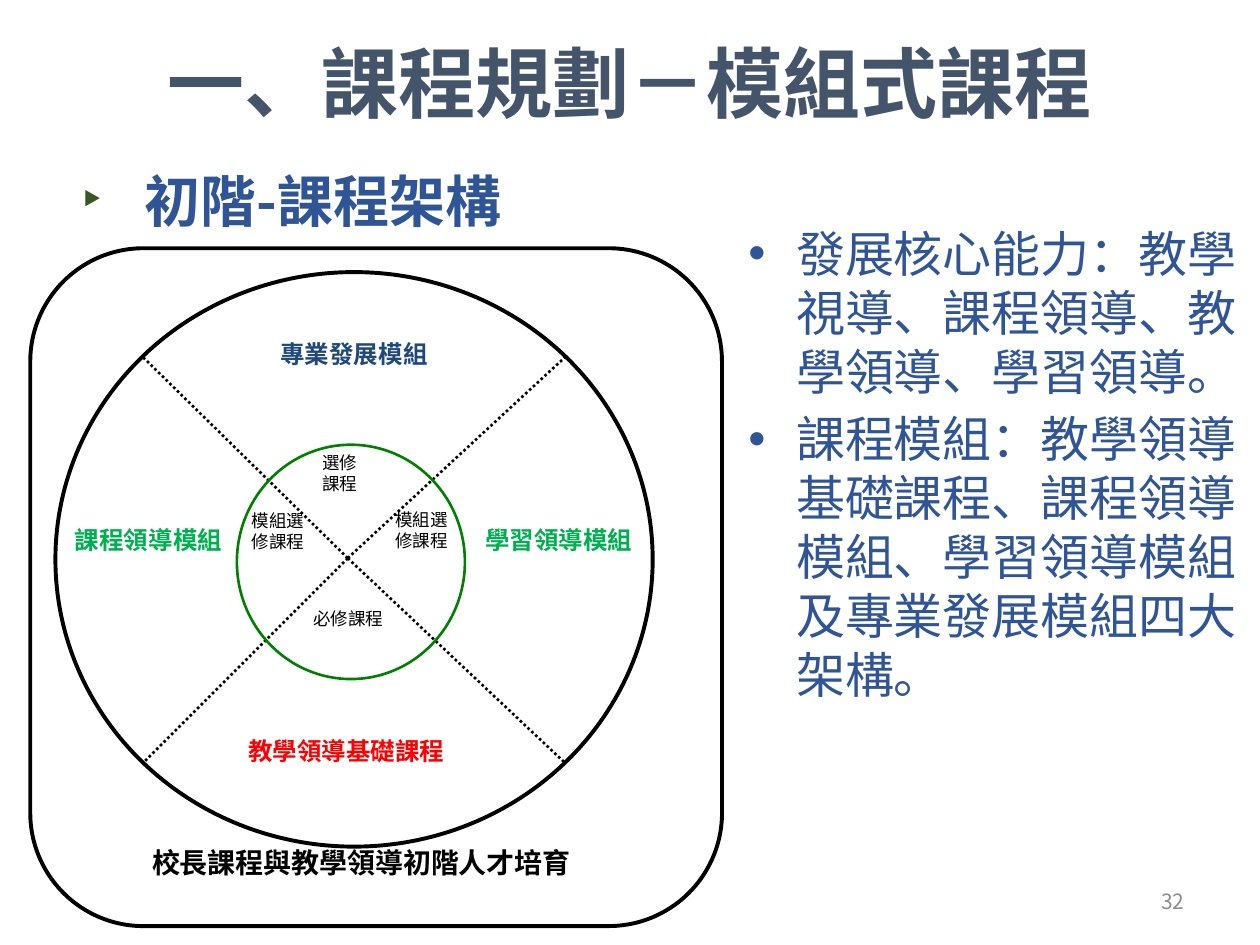
import pptx
import pptx.util
import pptx.dml.color
import pptx.enum.dml
import pptx.enum.shapes
import pptx.enum.text
import pptx.oxml.ns
import lxml.etree

Inches, Pt = pptx.util.Inches, pptx.util.Pt
ALIGN = pptx.enum.text.PP_ALIGN
SHAPE = pptx.enum.shapes.MSO_SHAPE
qn = pptx.oxml.ns.qn

SANS, SERIF = "Noto Sans CJK SC", "Times New Roman"
NAVY, BLUE, BLACK, GREEN = "44546A", "2F5597", "000000", "00B050"

# Content
TITLE = "一、課程規劃－模組式課程"
HEADING = "初階-課程架構"
POINTS = [
    "發展核心能力：教學視導、課程領導、教學領導、學習領導。",
    "課程模組：教學領導基礎課程、課程領導模組、學習領導模組及專業發展模組四大架構。",
]
CAPTION = "校長課程與教學領導初階人才培育"
MODULES = [  # text, colour, box
    ("課程領導模組", GREEN, (0.38, 4.02, 1.6, 0.57)),
    ("教學領導基礎課程", "FF0000", (1.67, 5.69, 2.16, 0.92)),
    ("學習領導模組", GREEN, (3.59, 4.02, 1.69, 0.57)),
    ("專業發展模組", "1F497D", (1.92, 2.54, 1.78, 0.57)),
]
COURSES = [  # paragraphs, box
    (["選修", "課程"], (2.46, 3.54, 0.7, 0.79)),
    (["模組選修課程"], (1.9, 4.0, 0.7, 0.79)),
    (["必修課程"], (2.39, 4.78, 0.85, 0.42)),
    (["模組選修課程"], (3.04, 3.99, 0.7, 0.79)),
]
CENTER = (2.76, 4.43)
SPOKE_ENDS = [(x, y) for x in (1.13, 4.49) for y in (2.83, 6.06)]

prs = pptx.Presentation()
prs.slide_width, prs.slide_height = Inches(10), Inches(7.5)
s = prs.slides.add_slide(prs.slide_layouts[6])


def rgb(color):
    return pptx.dml.color.RGBColor.from_string(color)


def add_bullet(p, char, indent, color):
    pPr = p._p.get_or_add_pPr()
    pPr.set("marL", str(Inches(indent)))
    pPr.set("indent", str(-Inches(indent)))
    bu_color = lxml.etree.SubElement(pPr, qn("a:buClr"))
    lxml.etree.SubElement(bu_color, qn("a:srgbClr")).set("val", color)
    lxml.etree.SubElement(pPr, qn("a:buFont")).set("typeface", "Arial")
    lxml.etree.SubElement(pPr, qn("a:buChar")).set("char", char)


def add_text(box, paragraphs, size, color, leading=None, bold=False, font=SANS,
             align=ALIGN.LEFT, middle=False, bullet=None, gap=0):
    tf = s.shapes.add_textbox(*map(Inches, box)).text_frame
    tf.word_wrap = True
    if middle:
        tf.vertical_anchor = pptx.enum.text.MSO_ANCHOR.MIDDLE
    tf.text = "\n".join(paragraphs)
    for i, p in enumerate(tf.paragraphs):
        p.alignment = align
        if leading:
            p.line_spacing = Pt(leading)
        if i:
            p.space_before = Pt(gap)
        if bullet:
            add_bullet(p, *bullet)
        for r in p.runs:
            r.font.name, r.font.size, r.font.bold = font, Pt(size), bold
            r.font.color.rgb = rgb(color)
            ea = lxml.etree.SubElement(r._r.get_or_add_rPr(), qn("a:ea"))
            ea.set("typeface", SANS)


def add_outline(kind, box, color, width, fill=None):
    sp = s.shapes.add_shape(kind, *map(Inches, box))
    sp.shadow.inherit = False
    if fill:
        sp.fill.solid()
        sp.fill.fore_color.rgb = rgb(fill)
    else:
        sp.fill.background()
    sp.line.color.rgb, sp.line.width = rgb(color), Pt(width)
    return sp


def add_spoke(start, end):
    line = s.shapes.add_connector(pptx.enum.shapes.MSO_CONNECTOR.STRAIGHT,
                                  *map(Inches, start + end))
    line.line.color.rgb, line.line.width = rgb(BLACK), Pt(1.5)
    line.line.dash_style = pptx.enum.dml.MSO_LINE.ROUND_DOT
    lxml.etree.SubElement(line._element.spPr, qn("a:effectLst"))


# Title, heading, points and slide number
add_text((0.5, -0.03, 9, 1.25), [TITLE], 44, NAVY, 60, bold=True,
         align=ALIGN.CENTER, middle=True)
add_text((0.55, 1.22, 4.42, 0.75), [HEADING], 32, BLUE, 42, bold=True,
         bullet=("‣", 0.5, "385723"))
add_text((5.84, 1.72, 4.08, 4.95), POINTS, 28, BLUE, 33.7,
         bullet=("•", 0.38, BLUE), gap=5)
add_text((7.17, 6.95, 2.33, 0.4), ["32"], 12, "8C8C8C",
         align=ALIGN.RIGHT, middle=True)

# Frame, circles and spokes
frame = add_outline(SHAPE.ROUNDED_RECTANGLE, (0.24, 1.97, 5.49, 5.38), BLACK, 2.25, "FFFFFF")
frame.adjustments[0] = 0.167
add_text((0.27, 6.64, 5.2, 0.5), [CAPTION], 16, BLACK, 21, bold=True,
         font=SERIF, align=ALIGN.CENTER)
add_outline(SHAPE.OVAL, (0.44, 2.16, 4.74, 4.56), BLACK, 2.25)
for end in SPOKE_ENDS:
    add_spoke(CENTER, end)
add_outline(SHAPE.OVAL, (1.88, 3.53, 1.81, 1.86), "008000", 1.5)

# Labels of the outer and inner ring
for text, color, box in MODULES:
    add_text(box, [text], 14, color, 24, bold=True, font=SERIF, align=ALIGN.CENTER)
for paragraphs, box in COURSES:
    add_text(box, paragraphs, 10, BLACK, 12, font=SERIF)

prs.save("out.pptx")
